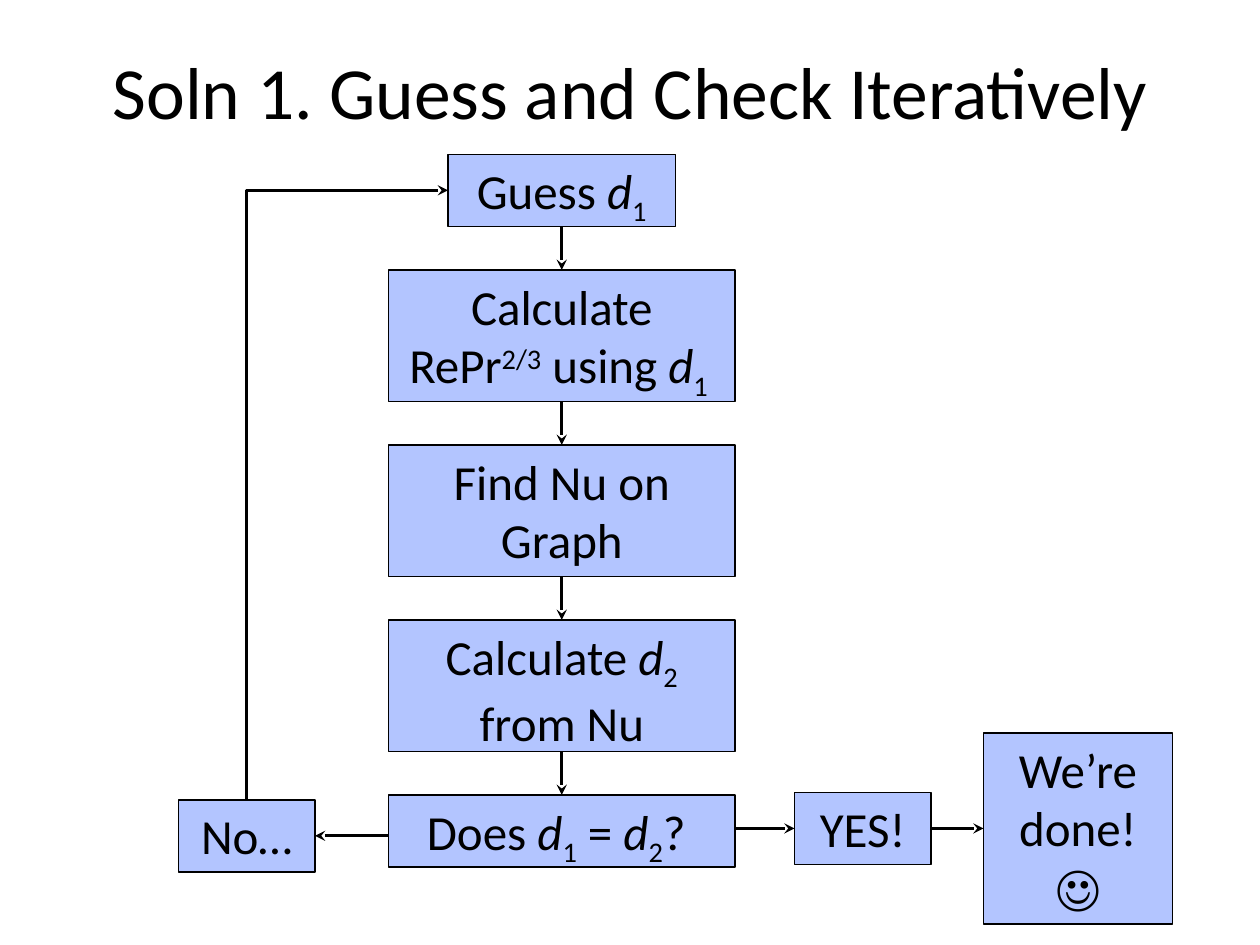
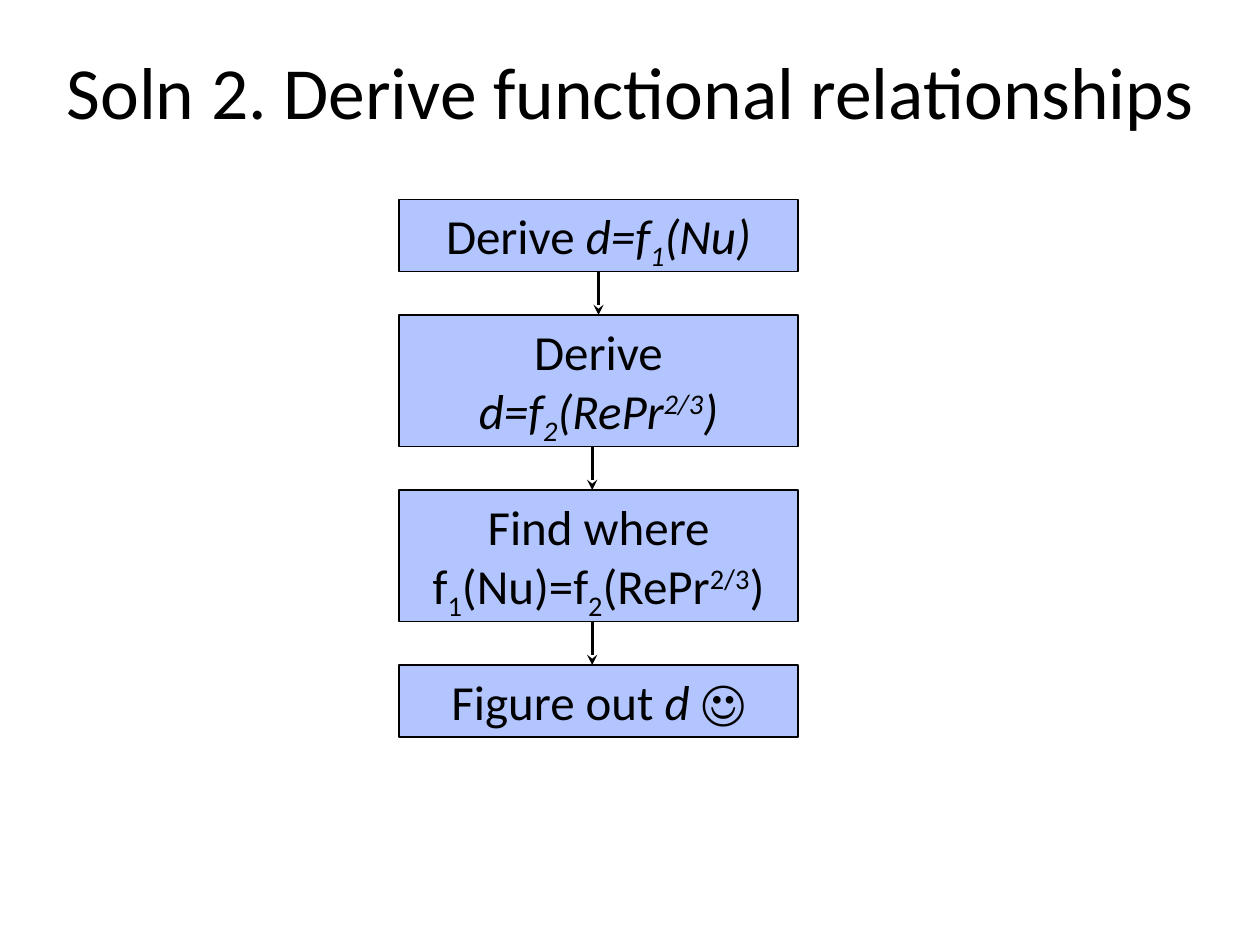
from collections import namedtuple
from dataclasses import dataclass

from lxml import etree
from pptx import Presentation
from pptx.dml import color
from pptx.enum import shapes, text
from pptx.oxml import ns
from pptx.util import Pt

Box = namedtuple("Box", "left top width height")


@dataclass(frozen=True)
class Theme:
    font: str = "Calibri"
    ink: color.RGBColor = color.RGBColor(0, 0, 0)
    fill: color.RGBColor = color.RGBColor(0xB3, 0xC5, 0xFF)
    title_size: float = 42
    step_size: float = 28
    line_height: float = 34
    padding: float = 7.2
    gap: float = 24.8
    border: float = 1
    arrow: float = 1.5


THEME = Theme()
PAGE = Box(0, 0, 720, 540)
BASELINES = {"sub": "-25000", "sup": "30000"}

GUESS_STEPS = [
    (1, 130, [("Guess ", ""), ("d", "italic"), ("1", "sub")]),
    (2, 198, [("Calculate RePr", ""), ("2/3", "sup"), (" using ", ""),
              ("d", "italic"), ("1 ", "sub")]),
    (2, 198, [("Find Nu on Graph", "")]),
    (2, 198, [("Calculate ", ""), ("d", "italic"), ("2", "sub"), (" from Nu", "")]),
    (1, 198, [("Does ", ""), ("d", "italic"), ("1", "sub"), (" = ", ""),
              ("d", "italic"), ("2", "sub"), ("? ", "")]),
]
DERIVE_STEPS = [
    (1, 228, [("Derive ", ""), ("d=f", "italic"), ("1", "italic sub"),
              ("(Nu)", "italic")]),
    (2, 228, [("Derive ", ""), ("d=f", "italic"), ("2", "italic sub"),
              ("(RePr", "italic"), ("2/3", "italic sup"), (")", "italic")]),
    (2, 228, [("Find where f", ""), ("1", "sub"), ("(Nu)=f", ""), ("2", "sub"),
              ("(RePr", ""), ("2/3", "sup"), (")", "")]),
    (1, 228, [("Figure out ", ""), ("d ", "italic"), ("☺", "")]),
]


def add_runs(paragraph, parts, size):
    paragraph.alignment = text.PP_ALIGN.CENTER
    for words, style in parts:
        run = paragraph.add_run()
        run.text = words
        run.font.name = THEME.font
        run.font.size = Pt(size)
        run.font.color.rgb = THEME.ink
        run.font.italic = "italic" in style
        for name, baseline in BASELINES.items():
            if name in style:
                run.font._element.set("baseline", baseline)


def add_title(slide, words, box):
    title = slide.shapes.title
    title.left, title.top, title.width, title.height = map(Pt, box)
    frame = title.text_frame
    frame.word_wrap = True
    frame.auto_size = text.MSO_AUTO_SIZE.NONE
    frame.vertical_anchor = text.MSO_ANCHOR.TOP
    add_runs(frame.paragraphs[0], [(words, "")], THEME.title_size)


def step_height(lines):
    return THEME.padding + lines * THEME.line_height


def add_step(slide, box, parts):
    shape = slide.shapes.add_shape(shapes.MSO_SHAPE.RECTANGLE, *map(Pt, box))
    shape.shadow.inherit = False
    shape.fill.solid()
    shape.fill.fore_color.rgb = THEME.fill
    shape.line.color.rgb = THEME.ink
    shape.line.width = Pt(THEME.border)
    frame = shape.text_frame
    frame.word_wrap = True
    frame.vertical_anchor = text.MSO_ANCHOR.TOP
    add_runs(frame.paragraphs[0], parts, THEME.step_size)
    return box


def add_arrow(slide, start, end, kind=shapes.MSO_CONNECTOR.STRAIGHT, arrowhead="a:tailEnd"):
    connector = slide.shapes.add_connector(kind, *map(Pt, (*start, *end)))
    connector.line.color.rgb = THEME.ink
    connector.line.width = Pt(THEME.arrow)
    line = connector.line._get_or_add_ln()
    etree.SubElement(line, ns.qn(arrowhead), type="stealth", w="med", len="med")
    etree.SubElement(connector._element.spPr, ns.qn("a:effectLst"))
    return connector


def add_return_arrow(slide, start, end):
    connector = add_arrow(slide, end, start, shapes.MSO_CONNECTOR.ELBOW, "a:headEnd")
    connector._element.spPr.find(ns.qn("a:prstGeom")).set("prst", "bentConnector2")


def add_step_column(slide, box, steps, arrow_shifts):
    boxes = []
    centre = box.left + box.width / 2
    top = box.top
    for lines, width, parts in steps:
        if boxes:
            x = centre + arrow_shifts[len(boxes) - 1]
            add_arrow(slide, (x, top - THEME.gap), (x, top))
        step = Box(centre - width / 2, top, width, step_height(lines))
        boxes.append(add_step(slide, step, parts))
        top += step.height + THEME.gap
    return boxes


def add_outcomes(slide, guess, question):
    right = question.left + question.width
    yes = add_step(slide, Box(right + 34, question.top - 1.4, 78, step_height(1)),
                   [("YES!", "")])
    yes_right = yes.left + yes.width
    done = add_step(slide, Box(yes_right + 30, yes.top - 34, 108, step_height(3)),
                    [("We’re done! ☺", "")])
    no = add_step(slide, Box(question.left - 120, question.top + 2.8, 78, step_height(1)),
                  [("No…", "")])
    yes_line = yes.top + yes.height / 2
    no_line = no.top + no.height / 2
    add_arrow(slide, (right, yes_line), (yes.left, yes_line))
    add_arrow(slide, (yes_right, yes_line), (done.left, yes_line))
    add_arrow(slide, (question.left, no_line), (no.left + no.width, no_line))
    add_return_arrow(slide, (no.left + no.width / 2, no.top),
                     (guess.left, guess.top + guess.height / 2))


def add_flow_slide(presentation, title, box, steps, arrow_shifts):
    slide = presentation.slides.add_slide(presentation.slide_layouts[5])
    add_title(slide, title, Box(24, 22.5, PAGE.width - 48, 90))
    return slide, add_step_column(slide, box, steps, arrow_shifts)


def main():
    presentation = Presentation()
    presentation.slide_width = Pt(PAGE.width)
    presentation.slide_height = Pt(PAGE.height)
    slide, boxes = add_flow_slide(presentation, "Soln 1. Guess and Check Iteratively",
                                  Box(222, 88.2, 198, 408), GUESS_STEPS, [0, 0, 0, 0])
    add_outcomes(slide, boxes[0], boxes[-1])
    add_flow_slide(presentation, "Soln 2. Derive functional relationships",
                   Box(228, 114, 228, 307), DERIVE_STEPS, [0, -3.6, -3.6])
    presentation.save("out.pptx")


if __name__ == "__main__":
    main()
